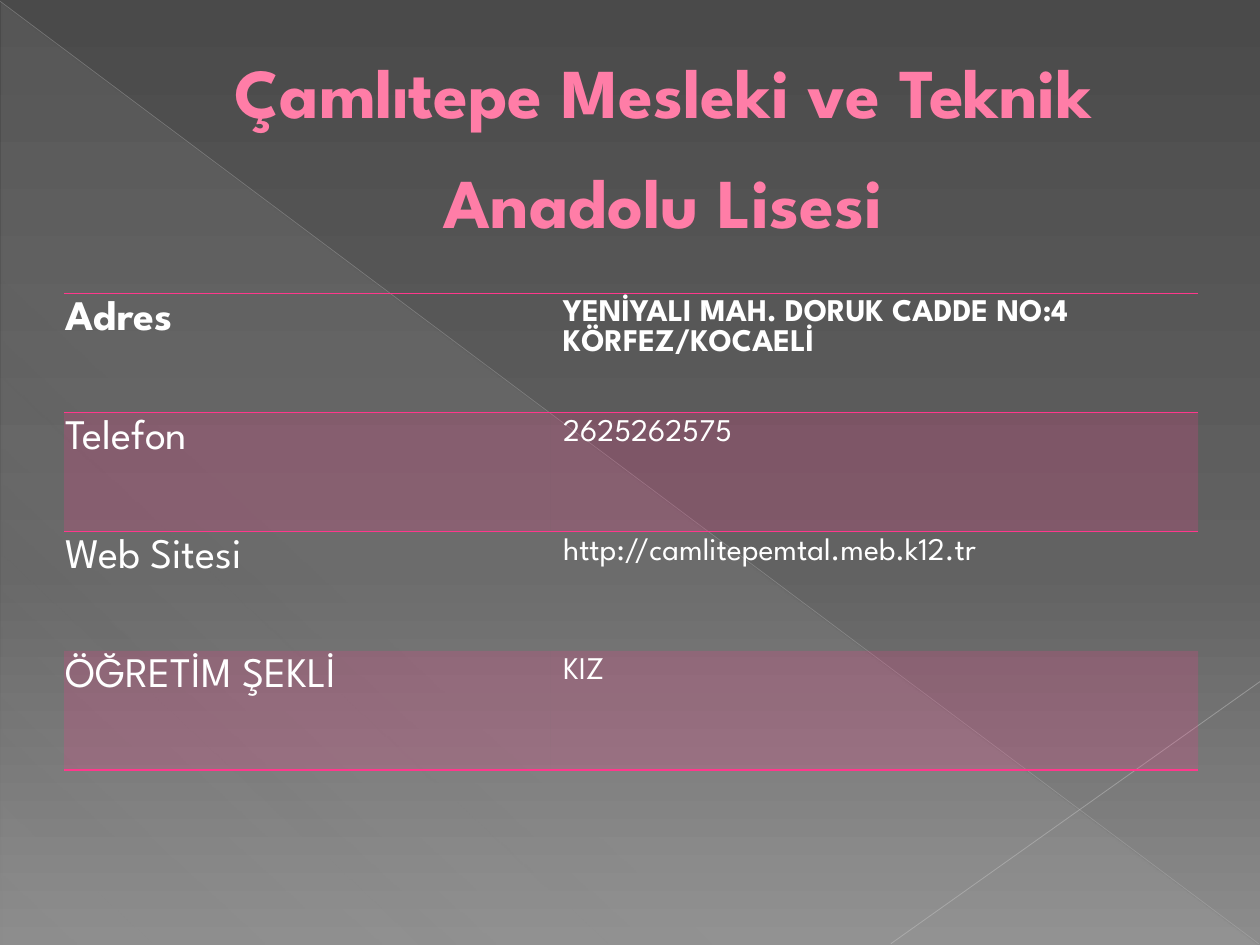
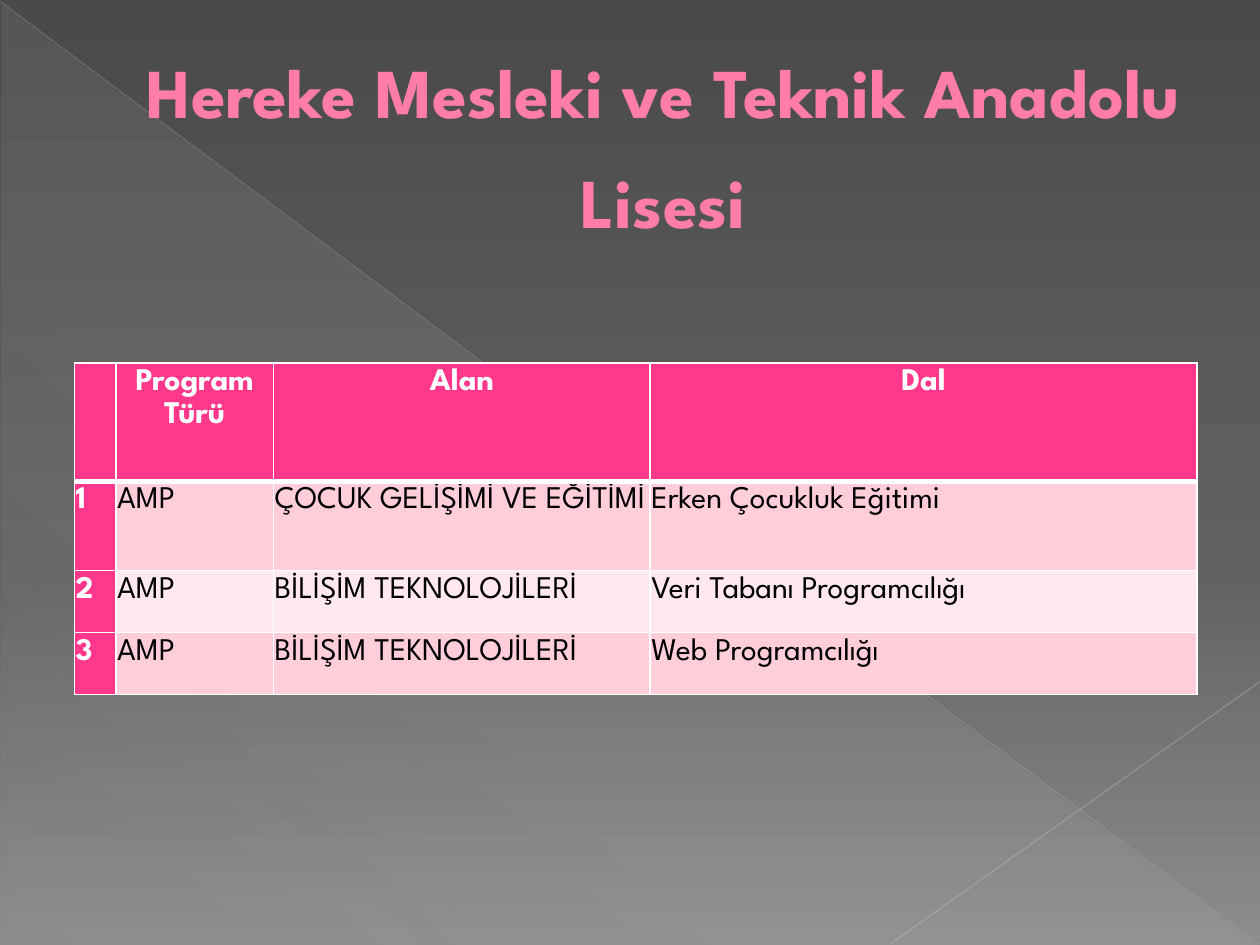
from lxml.etree import SubElement
from pptx import Presentation
from pptx.dml.color import RGBColor
from pptx.enum.shapes import MSO_CONNECTOR, MSO_SHAPE
from pptx.enum.text import MSO_ANCHOR, PP_ALIGN
from pptx.oxml.ns import qn
from pptx.util import Emu, Inches, Pt

FONT = "League Spartan"
PINK, LIGHT_PINK, DARK_PINK = "FF388C", "FF7DA7", "B12761"
WHITE, BLACK = "FFFFFF", "000000"
BAND_A, BAND_B = "FFCEDA", "FFE8EE"
NO_STYLE = "{2D5ABB26-0587-4C30-8999-92F81FD0307C}"

prs = Presentation()
prs.slide_width, prs.slide_height = Inches(10), Inches(7.5)
# One percent of the slide's width and height
X, Y = prs.slide_width / 100, prs.slide_height / 100


def paint(parent, color, alpha=100):
    """Add a solid fill, or a gradient for a list of (position, colour, alpha)."""
    if isinstance(color, str):
        fill = SubElement(parent, qn("a:solidFill"))
        stops = [(fill, color, alpha)]
    else:
        fill = SubElement(parent, qn("a:gradFill"), rotWithShape="1")
        gs_lst = SubElement(fill, qn("a:gsLst"))
        stops = [(SubElement(gs_lst, qn("a:gs"), pos=str(pos * 1000)), c, a)
                 for pos, c, a in color]
    for holder, c, a in stops:
        clr = SubElement(holder, qn("a:srgbClr"), val=str(RGBColor.from_string(c)))
        if a < 100:
            SubElement(clr, qn("a:alpha"), val=str(a * 1000))
    return fill


def add_run(p, text, size, color, bold):
    r = p.add_run()
    r.text = text
    r.font.size, r.font.bold, r.font.name = Pt(size), bold, FONT
    r.font.color.rgb = RGBColor.from_string(color)
    return r


# Shared background on the master
master = prs.slide_master
master.background.fill.solid()
bg = master.element.find(".//" + qn("p:bgPr"))
bg.remove(bg[0])
grad = paint(bg, [(0, "4A4A4A", 100), (60, "626262", 100), (100, "8C8C8C", 100)])
SubElement(grad, qn("a:lin"), ang=str(90 * 60000), scaled="0")
bg.insert(0, grad)

# Diagonals: start, end, colour, width, opacity
diagonals = [((0, 0.13), (99.9, 99.87), "BFBFBF", 0.39, 35),
             ((100, 72.13), (70.7, 99.87), "C6C6C6", 0.47, 45)]

# Tables: rules lists the weight of each horizontal line from the top down
slides = [
    dict(title="Çamlıtepe Mesleki ve Teknik Anadolu Lisesi",
         left=5.1, top=31.07, cols=[38.6, 51.4], rows=[12.6] * 4,
         rules=[1, 1, 0, 0, 1], sides=0, line=PINK,
         cells=[["Adres", "YENİYALI MAH. DORUK CADDE NO:4 KÖRFEZ/KOCAELİ"],
                ["Telefon", "2625262575"],
                ["Web Sitesi", "http://camlitepemtal.meb.k12.tr"],
                ["ÖĞRETİM ŞEKLİ", "KIZ"]]),
    dict(title="Hereke Mesleki ve Teknik Anadolu Lisesi",
         left=5.9, top=38.4, cols=[3.3, 12.5, 29.9, 43.4],
         rows=[12.53, 9.47, 6.55, 6.55],
         rules=[1, 3, 1, 1, 1], sides=1, line=WHITE,
         cells=[["", "Program Türü", "Alan", "Dal"],
                ["1", "AMP", "ÇOCUK GELİŞİMİ VE EĞİTİMİ", "Erken Çocukluk Eğitimi"],
                ["2", "AMP", "BİLİŞİM TEKNOLOJİLERİ", "Veri Tabanı Programcılığı"],
                ["3", "AMP", "BİLİŞİM TEKNOLOJİLERİ", "Web Programcılığı"]]),
]

for d in slides:
    s = prs.slides.add_slide(prs.slide_layouts[5])
    contact = d["sides"] == 0

    # Translucent triangle
    sp = s.shapes.add_shape(MSO_SHAPE.RIGHT_TRIANGLE, Emu(int(0.1 * X)), Emu(int(0.27 * Y)),
                            Emu(int(99.8 * X)), Emu(int(99.73 * Y)))
    sp.shadow.inherit = False
    sp.line.fill.background()
    grad = paint(sp._element.spPr, [(0, "D2D2D2", 10), (70, "D2D2D2", 8), (100, "D2D2D2", 1)])
    SubElement(grad, qn("a:lin"), ang=str(133 * 60000), scaled="0")
    sp._element.spPr.insert(2, grad)

    # Diagonal lines
    for (x1, y1), (x2, y2), color, width, alpha in diagonals:
        cx = s.shapes.add_connector(MSO_CONNECTOR.STRAIGHT, Emu(int(x1 * X)), Emu(int(y1 * Y)),
                                    Emu(int(x2 * X)), Emu(int(y2 * Y)))
        cx.line.width = Pt(width)
        paint(cx.line._ln, color, alpha)
        SubElement(cx._element.spPr, qn("a:effectLst"))

    # Title, in front of the decoration
    title = s.shapes.title
    s.shapes._spTree.append(title._element)
    title.left, title.top = Emu(int(5 * X)), Emu(int(3.87 * Y))
    title.width, title.height = Emu(int(90 * X)), Emu(int(20.4 * Y))
    tf = title.text_frame
    tf.word_wrap, tf.vertical_anchor = True, MSO_ANCHOR.MIDDLE
    p = tf.paragraphs[0]
    p.alignment, p.line_spacing = PP_ALIGN.CENTER, 1.3
    p._p.get_or_add_pPr().set("marL", str(Inches(0.53)))
    r = add_run(p, d["title"], 40, LIGHT_PINK, True)
    ln = SubElement(r.font._element, qn("a:ln"), w=str(Pt(0.5)))
    paint(ln, DARK_PINK)
    r.font._element.insert(0, ln)

    # Table grid
    frame = s.shapes.add_table(len(d["rows"]), len(d["cols"]),
                               Emu(int(d["left"] * X)), Emu(int(d["top"] * Y)),
                               Emu(int(sum(d["cols"]) * X)), Emu(int(sum(d["rows"]) * Y)))
    tbl = frame.table
    tbl.first_row = tbl.horz_banding = False
    tbl._tbl.tblPr.find(qn("a:tableStyleId")).text = NO_STYLE
    for col, w in zip(tbl.columns, d["cols"]):
        col.width = Emu(int(w * X))
    for row, h in zip(tbl.rows, d["rows"]):
        row.height = Emu(int(h * Y))

    # Table cells
    for i, texts in enumerate(d["cells"]):
        for j, text in enumerate(texts):
            cell = tbl.cell(i, j)
            head = i == 0 or (not contact and j == 0)
            plain = contact and j == 1
            if not plain:
                cell.margin_left = cell.margin_right = Inches(0.01)
                cell.margin_top = cell.margin_bottom = Inches(0.01)
            p = cell.text_frame.paragraphs[0]
            if not plain:
                p.line_spacing = 1.15
            if not contact and i == 0:
                p.alignment = PP_ALIGN.CENTER
            if text:
                add_run(p, text, 24 if contact and j == 0 else 18,
                        WHITE if contact or head else BLACK, head)

            # Borders come before the fill
            tcPr = cell._tc.get_or_add_tcPr()
            weights = dict(lnL=d["sides"], lnR=d["sides"],
                           lnT=d["rules"][i], lnB=d["rules"][i + 1])
            for tag, weight in weights.items():
                if weight:
                    paint(SubElement(tcPr, qn("a:" + tag), w=str(Pt(weight))), d["line"])
            if not contact:
                paint(tcPr, PINK if head else BAND_A if i % 2 else BAND_B)
            elif i % 2:
                paint(tcPr, PINK, 20)
            else:
                cell.fill.background()

prs.save("out.pptx")
